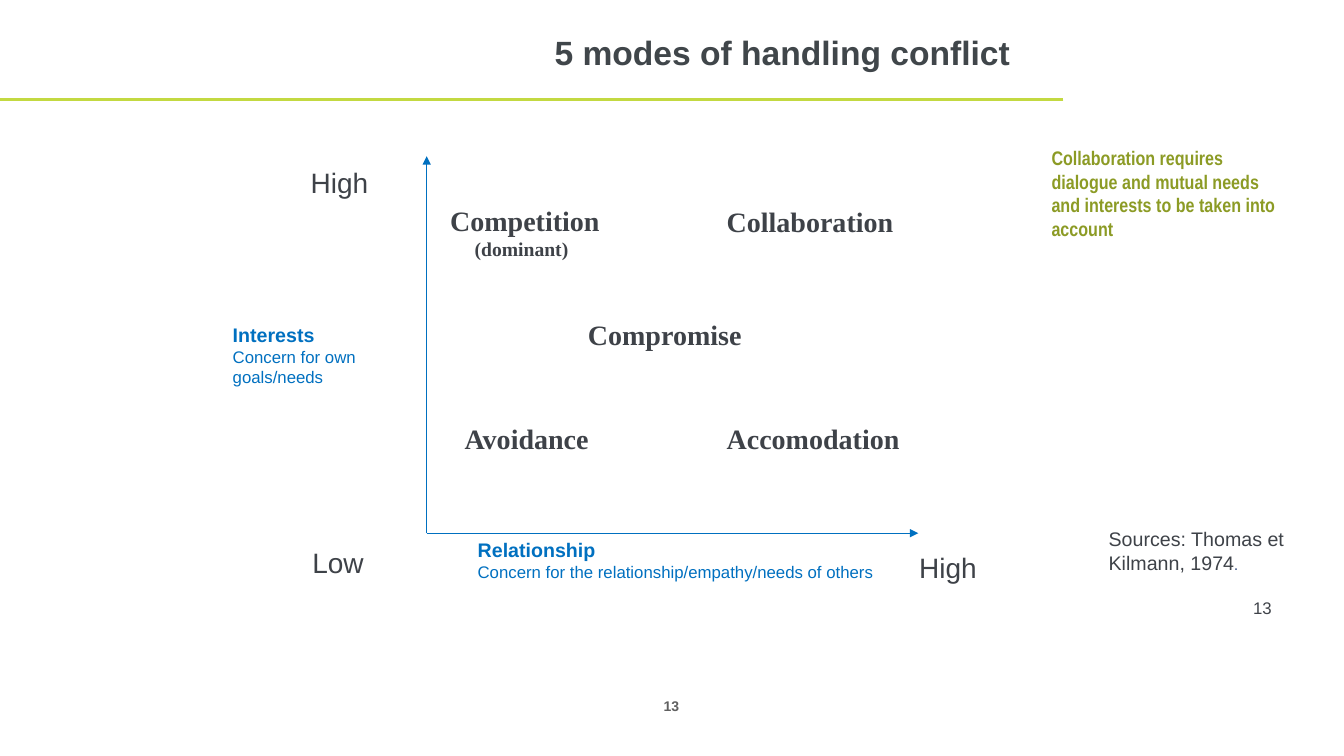
from dataclasses import dataclass

from lxml import etree
from pptx import Presentation
from pptx.dml.color import RGBColor
from pptx.enum.shapes import MSO_CONNECTOR
from pptx.enum.text import MSO_ANCHOR, PP_ALIGN
from pptx.oxml.ns import qn
from pptx.util import Inches, Pt

STRAIGHT = MSO_CONNECTOR.STRAIGHT
TOP, MIDDLE, BOTTOM = MSO_ANCHOR.TOP, MSO_ANCHOR.MIDDLE, MSO_ANCHOR.BOTTOM
LEFT, CENTER, RIGHT = PP_ALIGN.LEFT, PP_ALIGN.CENTER, PP_ALIGN.RIGHT
COLUMNS, ROWS = 80, 45


@dataclass(frozen=True)
class Theme:
    sans: str = "Arial"
    narrow: str = "Arial Narrow"
    serif: str = "Times New Roman"
    ink: str = "3E4248"
    title_ink: str = "40464A"
    footer_ink: str = "606060"
    navy: str = "002060"
    blue: str = "0070C0"
    lime: str = "C3D941"
    olive: str = "8C9B25"
    title_size: int = 24
    large: int = 20
    medium: int = 14
    small: int = 12
    tiny: int = 11
    footer_size: int = 10


def add_run(paragraph, text, *, size, color, font, bold=False):
    run = paragraph.add_run()
    run.text = text
    run.font.size = Pt(size)
    run.font.name = font
    run.font.bold = bold
    run.font.color.rgb = RGBColor.from_string(color)


class SlideBuilder:
    """Places elements on a grid of COLUMNS by ROWS covering the slide."""

    def __init__(self, presentation, theme):
        self.theme = theme
        self.column = presentation.slide_width / COLUMNS
        self.row = presentation.slide_height / ROWS
        self.slide = presentation.slides.add_slide(presentation.slide_layouts[6])

    def point(self, column, row):
        return round(column * self.column), round(row * self.row)

    def text_box(self, left, top, width, height, anchor=TOP):
        shape = self.slide.shapes.add_textbox(
            *self.point(left, top), *self.point(width, height))
        frame = shape.text_frame
        frame.word_wrap = True
        frame.vertical_anchor = anchor
        return frame

    def text(self, text, box, *, size, color=None, font=None, bold=False,
             align=LEFT, anchor=TOP):
        frame = self.text_box(*box, anchor=anchor)
        paragraph = frame.paragraphs[0]
        paragraph.alignment = align
        add_run(paragraph, text, size=size, color=color or self.theme.ink,
                font=font or self.theme.sans, bold=bold)
        return frame

    def level(self, text, left, top):
        self.text(text, (left, top, 6.6, 2.64), size=self.theme.large)

    def mode(self, name, left, top):
        return self.text(name, (left, top, 15, 2.64), size=self.theme.large,
                         font=self.theme.serif, bold=True)

    def axis_label(self, name, meaning, box, anchor=TOP):
        theme = self.theme
        frame = self.text(name, box, size=theme.medium, color=theme.blue,
                          bold=True, anchor=anchor)
        add_run(frame.add_paragraph(), meaning, size=theme.small,
                color=theme.blue, font=theme.sans)

    def line(self, start, end, color, width, arrow=False):
        connector = self.slide.shapes.add_connector(
            STRAIGHT, *self.point(*start), *self.point(*end))
        connector.line.color.rgb = RGBColor.from_string(color)
        connector.line.width = Pt(width)
        if arrow:
            outline = connector.line._get_or_add_ln()
            etree.SubElement(outline, qn("a:tailEnd"), type="triangle")
        etree.SubElement(connector._element.spPr, qn("a:effectLst"))


def main():
    presentation = Presentation()
    presentation.slide_width = Inches(13.33)
    presentation.slide_height = Inches(7.5)
    theme = Theme()
    builder = SlideBuilder(presentation, theme)

    # Header and page numbers
    builder.text("13", (38.4, 41.28, 3.12, 1.44), size=theme.footer_size,
                 color=theme.footer_ink, bold=True, align=CENTER, anchor=MIDDLE)
    builder.line((63.3, 5.94), (0, 5.94), theme.lime, 2)
    builder.text("13", (74, 35.28, 5.2, 1.8), size=theme.small)
    builder.text("5 modes of handling conflict", (13.26, 0, 47.46, 6.18),
                 size=theme.title_size, color=theme.title_ink, bold=True,
                 align=RIGHT, anchor=MIDDLE)

    # Axes
    origin = (25.4, 31.74)
    for tip in ((origin[0], 9.3), (54.66, origin[1])):
        builder.line(origin, tip, theme.blue, 0.75, arrow=True)
    builder.axis_label("Interests", "Concern for own goals/needs",
                       (13.26, 18.3, 10.1, 5.04), anchor=BOTTOM)
    builder.axis_label("Relationship",
                       "Concern for the relationship/empathy/needs of others",
                       (27.84, origin[1], 26.82, 3.24))
    for label in (("High", 17.9, 9.54), ("Low", 18, 32.16), ("High", 54.12, 32.46)):
        builder.level(*label)

    # Conflict modes
    competition = builder.mode("Competition", 26.2, 11.82)
    dominant = competition.add_paragraph()
    dominant._p.get_or_add_pPr().set("marL", str(Pt(17.5)))
    add_run(dominant, "(dominant)", size=theme.medium, color=theme.ink,
            font=theme.serif, bold=True)
    for mode in (("Avoidance", 27.06, 24.78), ("Collaboration", 42.66, 11.88),
                 ("Accomodation", 42.66, 24.78), ("Compromise", 34.4, 18.6)):
        builder.mode(*mode)

    # Side notes
    sources = builder.text("Sources: Thomas et Kilmann, 1974",
                           (65.4, 31.08, 14.6, 3.42), size=theme.medium)
    add_run(sources.paragraphs[0], ".", size=theme.tiny, color=theme.navy,
            font=theme.narrow)
    builder.text("Collaboration requires dialogue and mutual needs "
                 "and interests to be taken into account",
                 (62, 8.4, 14.6, 6.24), size=theme.medium, color=theme.olive,
                 font=theme.narrow, bold=True)

    presentation.save("out.pptx")


if __name__ == "__main__":
    main()
